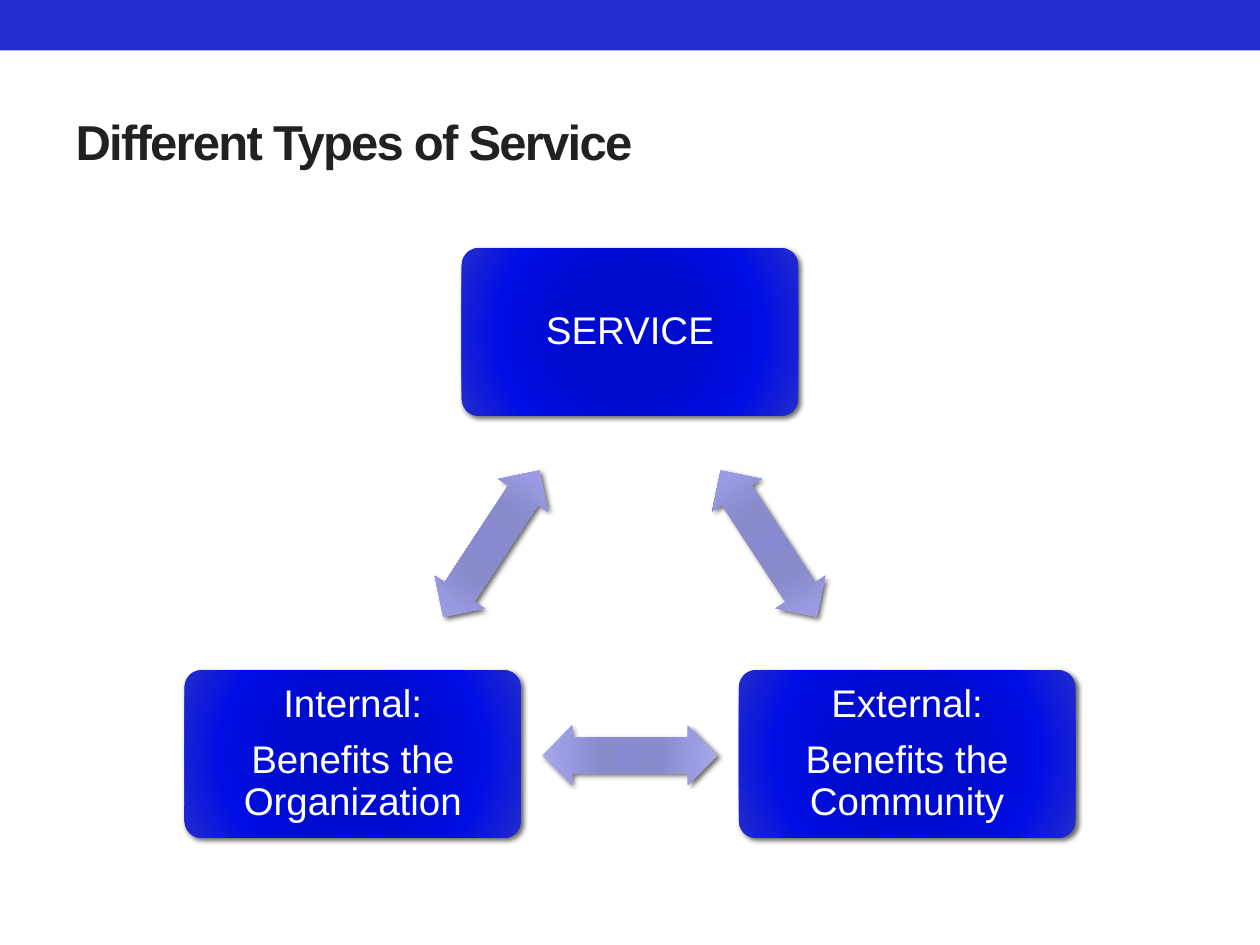
from pptx import Presentation
from pptx.dml.color import RGBColor
from pptx.enum.shapes import MSO_SHAPE
from pptx.enum.text import MSO_ANCHOR, PP_ALIGN
from pptx.oxml import parse_xml
from pptx.oxml.ns import nsdecls
from pptx.util import Inches, Pt

RECTANGLE = MSO_SHAPE.RECTANGLE
ROUNDED = MSO_SHAPE.ROUNDED_RECTANGLE
DOUBLE_ARROW = MSO_SHAPE.LEFT_RIGHT_ARROW
MIDDLE = MSO_ANCHOR.MIDDLE
LEFT, CENTER = PP_ALIGN.LEFT, PP_ALIGN.CENTER

COLORS = {"band": "222CCD", "title": "212121", "white": "FFFFFF", "shadow": "000000"}
STOPS = (0, 34, 70, 100)
BOX_GRADIENT = ("000CCD", "000CCD", "000DE4", "222CCD")
ARROW_GRADIENT = ("8889CE", "8A8BCB", "9A9BE3", "ACADE3")


def write(frame, lines, size, color, bold=False, align=LEFT, spacing=None, gap=0, tracking=None):
    """Fill a text frame with one paragraph per line."""
    frame.word_wrap = True
    frame.vertical_anchor = MIDDLE
    for index, line in enumerate(lines):
        para = frame.add_paragraph() if index else frame.paragraphs[0]
        para.alignment = align
        para.line_spacing = spacing
        para.space_before = Pt(gap if index else 0)
        span = para.add_run()
        span.text = line
        span.font.name = "Arial"
        span.font.size = Pt(size)
        span.font.bold = bold
        span.font.color.rgb = RGBColor.from_string(COLORS[color])
        if tracking is not None:
            span.font._element.set("spc", str(tracking * 100))


class ServicePage:
    """Style and current slide."""

    def __init__(self, deck):
        self.page = deck.slides.add_slide(deck.slide_layouts[5])

    def place(self, kind, left, top, width, height):
        shape = self.page.shapes.add_shape(
            kind, Inches(left), Inches(top), Inches(width), Inches(height))
        shape.line.fill.background()
        shape.shadow.inherit = False
        return shape

    def band(self, height):
        band = self.place(RECTANGLE, 0, 0, 10, height)
        band.fill.solid()
        band.fill.fore_color.rgb = RGBColor.from_string(COLORS["band"])

    def title(self, text):
        title = self.page.shapes.title
        title.left, title.top = Inches(0.5), Inches(0.58)
        title.width, title.height = Inches(9), Inches(1.08)
        write(title.text_frame, [text], 28, "title", bold=True, tracking=-1)

    def glow(self, shape, gradient):
        """Apply a radial gradient and a soft shadow."""
        stops = "".join(
            f'<a:gs pos="{stop * 1000}"><a:srgbClr val="{color}"/></a:gs>'
            for stop, color in zip(STOPS, gradient))
        properties = shape._element.spPr
        properties.get_or_add_ln().addprevious(parse_xml(
            f'<a:gradFill {nsdecls("a")} rotWithShape="1"><a:gsLst>{stops}</a:gsLst>'
            '<a:path path="circle"><a:fillToRect l="100000" t="100000" r="100000" b="100000"/>'
            '</a:path></a:gradFill>'))
        shadow = parse_xml(
            f'<a:outerShdw {nsdecls("a")} blurRad="{Pt(3)}" dist="{Pt(2)}" dir="2700000" '
            f'rotWithShape="0"><a:srgbClr val="{COLORS["shadow"]}"><a:alpha val="60000"/>'
            '</a:srgbClr></a:outerShdw>')
        properties.find("{*}effectLst").append(shadow)

    def box(self, center_x, top, lines):
        width, height = 2.67, 1.33
        box = self.place(ROUNDED, center_x - width / 2, top, width, height)
        box.adjustments[0] = 0.1
        self.glow(box, BOX_GRADIENT)
        frame = box.text_frame
        frame.margin_left = frame.margin_right = Inches(0.13)
        frame.margin_top = frame.margin_bottom = Inches(0.13)
        write(frame, lines, 22, "white", align=CENTER, spacing=0.9, gap=8)

    def arrow(self, center_x, top, rotation):
        width, height = 1.39, 0.47
        arrow = self.place(DOUBLE_ARROW, center_x - width / 2, top, width, height)
        arrow.adjustments[0] = 0.6
        arrow.adjustments[1] = 0.5
        arrow.rotation = rotation
        self.glow(arrow, ARROW_GRADIENT)


def main():
    deck = Presentation()
    deck.slide_width, deck.slide_height = Inches(10), Inches(7.5)
    page = ServicePage(deck)

    # Header
    page.band(0.4)
    page.title("Different Types of Service")

    # Triangle of boxes, symmetric about the slide's middle
    middle, reach = 5, 2.2
    page.box(middle, 1.97, ["SERVICE"])
    page.box(middle + reach, 5.32, ["External:", "Benefits the Community"])
    page.box(middle - reach, 5.32, ["Internal:", "Benefits the Organization"])

    # Arrows along the triangle's sides
    page.arrow(middle + reach / 2, 4.08, 56.7)
    page.arrow(middle, 5.76, 180)
    page.arrow(middle - reach / 2, 4.08, 303.3)

    deck.save("out.pptx")


if __name__ == "__main__":
    main()
